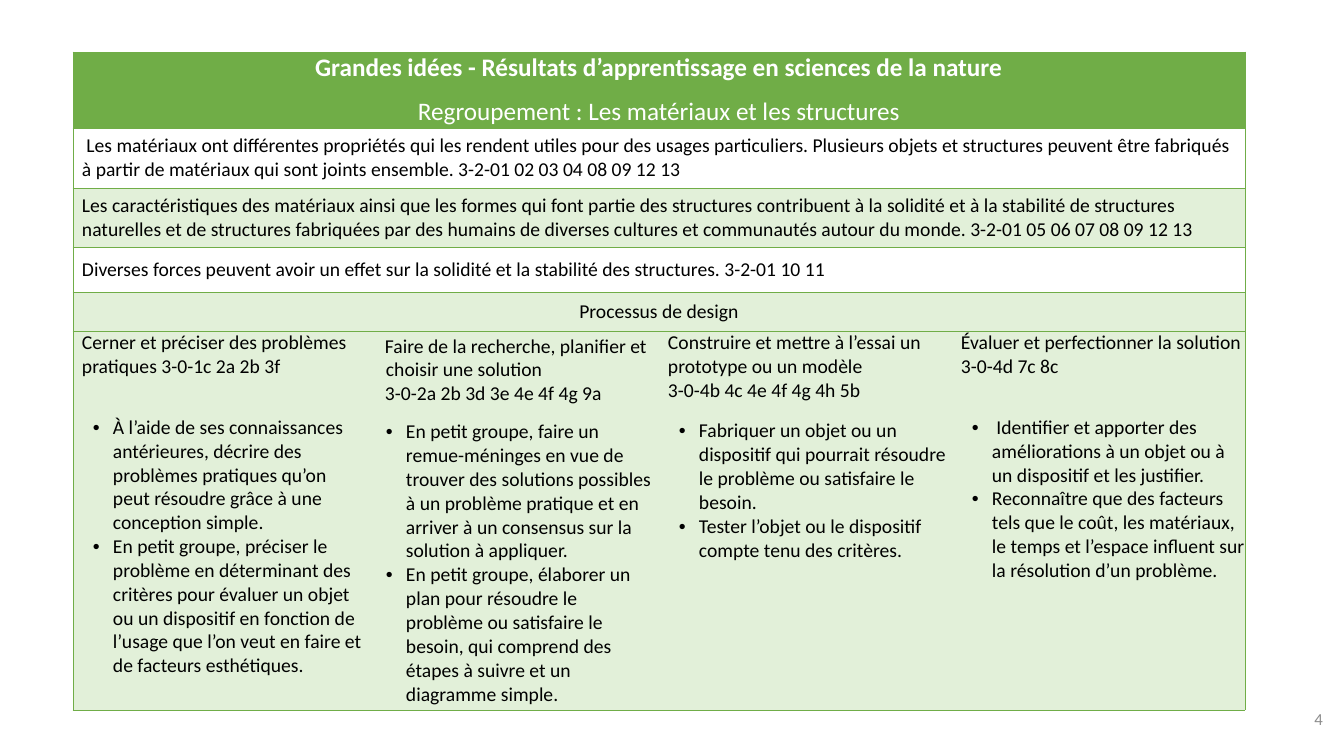
"""Build a one-slide table of Grade 3 science outcomes on materials and structures."""
from lxml import etree
from pptx import Presentation
from pptx import util as u
from pptx.dml.color import RGBColor
from pptx.enum import text
from pptx.oxml import ns

COLORS = {"green": "70AD47", "pale": "E2F0D9", "white": "FFFFFF",
          "black": "000000", "grey": "8C8C8C"}
CENTER, RIGHT = text.PP_ALIGN.CENTER, text.PP_ALIGN.RIGHT
TOP, MIDDLE = text.MSO_ANCHOR.TOP, text.MSO_ANCHOR.MIDDLE
SIDES = "LRTB"


def px(length):
    return u.Emu(round(length * 914400 / 100.8))


def color(name):
    return RGBColor.from_string(COLORS[name])


def write(para, words, size=14, ink="black", bold=False, align=None,
          left=0, hang=0, before=0, bullet=False):
    props = para._p.get_or_add_pPr()
    props.set("marL", str(px(left)))
    props.set("indent", str(px(-hang)))
    if bullet:
        etree.SubElement(props, ns.qn("a:buFont"), typeface="Arial")
        etree.SubElement(props, ns.qn("a:buChar"), char="•")
    if align is not None:
        para.alignment = align
    if before:
        para.space_before = u.Pt(before)
    span = para.add_run()
    span.text = words
    span.font.name = "Calibri"
    span.font.size = u.Pt(size)
    span.font.bold = bold
    span.font.color.rgb = color(ink)


class Deck:
    def __init__(self, width, height):
        self.deck = Presentation()
        self.deck.slide_width, self.deck.slide_height = px(width), px(height)
        self.page = self.deck.slides.add_slide(self.deck.slide_layouts[6])

    def fill_frame(self, frame, inset, paras):
        frame.word_wrap = True
        frame.margin_left = frame.margin_right = px(inset)
        frame.margin_top = frame.margin_bottom = px(inset)
        for index, (words, style) in enumerate(paras):
            para = frame.add_paragraph() if index else frame.paragraphs[0]
            write(para, words, **style)

    def text_box(self, left, top, width, height, inset, paras):
        box = self.page.shapes.add_textbox(px(left), px(top), px(width), px(height))
        self.fill_frame(box.text_frame, inset, paras)

    def table(self, left, top, column, count, heights):
        frame = self.page.shapes.add_table(
            len(heights), count, px(left), px(top), px(column * count), px(sum(heights)))
        table = frame.table
        table.first_row = table.horz_banding = False
        for table_column in table.columns:
            table_column.width = px(column)
        for row, height in zip(table.rows, heights):
            row.height = px(height)
        return table

    def cell(self, cell, fill, sides, anchor=MIDDLE, paras=()):
        cell.fill.solid()
        cell.fill.fore_color.rgb = color(fill)
        cell.vertical_anchor = anchor
        cell.margin_left = cell.margin_right = cell.margin_top = cell.margin_bottom = 0
        self.fill_frame(cell.text_frame, 0, paras)
        props = cell._tc.get_or_add_tcPr()
        for index, side in enumerate(SIDES):
            line = etree.Element(ns.qn(f"a:ln{side}"), w=str(u.Pt(0.5)))
            if side in sides:
                paint = etree.SubElement(line, ns.qn("a:solidFill"))
                etree.SubElement(paint, ns.qn("a:srgbClr"), val=COLORS["green"])
            else:
                etree.SubElement(line, ns.qn("a:noFill"))
            props.insert(index, line)

    def wide_row(self, table, row, fill, paras):
        last = len(table.columns) - 1
        table.cell(row, 0).merge(table.cell(row, last))
        for column in range(last + 1):
            self.cell(table.cell(row, column), fill, SIDES, paras=() if column else paras)


BODY = {"left": 9}
BULLET = {"left": 40, "hang": 20, "bullet": True}
TITLE = {"size": 18, "ink": "white", "align": CENTER}

WIDE_ROWS = [
    ("green", [
        ("Grandes idées - Résultats d’apprentissage en sciences de la nature",
         TITLE | {"bold": True}),
        ("Regroupement : Les matériaux et les structures", TITLE | {"before": 10})]),
    ("white", [
        (" Les matériaux ont différentes propriétés qui les rendent utiles pour des usages "
         "particuliers. Plusieurs objets et structures peuvent être fabriqués à partir de "
         "matériaux qui sont joints ensemble. 3-2-01 02 03 04 08 09 12 13", BODY)]),
    ("pale", [
        ("Les caractéristiques des matériaux ainsi que les formes qui font partie des "
         "structures contribuent à la solidité et à la stabilité de structures naturelles et "
         "de structures fabriquées par des humains de diverses cultures et communautés autour "
         "du monde. 3-2-01 05 06 07 08 09 12 13", BODY)]),
    ("white", [
        ("Diverses forces peuvent avoir un effet sur la solidité et la stabilité des "
         "structures. 3-2-01 10 11", BODY)]),
    ("pale", [("Processus de design", {"align": CENTER})]),
]

STEPS = [
    (TOP, BODY, 26.5,
     ["Cerner et préciser des problèmes pratiques 3-0-1c 2a 2b 3f"],
     ["À l’aide de ses connaissances antérieures, décrire des problèmes pratiques qu’on peut "
      "résoudre grâce à une conception simple.",
      "En petit groupe, préciser le problème en déterminant des critères pour évaluer un objet "
      "ou un dispositif en fonction de l’usage que l’on veut en faire et de facteurs "
      "esthétiques."]),
    (MIDDLE, {"left": 20, "hang": 1}, 10,
     ["Faire de la recherche, planifier et choisir une solution",
      "3-0-2a 2b 3d 3e 4e 4f 4g 9a"],
     ["En petit groupe, faire un remue-méninges en vue de trouver des solutions possibles à un "
      "problème pratique et en arriver à un consensus sur la solution à appliquer.",
      "En petit groupe, élaborer un plan pour résoudre le problème ou satisfaire le besoin, "
      "qui comprend des étapes à suivre et un diagramme simple."]),
    (TOP, BODY, 12,
     ["Construire et mettre à l’essai un prototype ou un modèle",
      "3-0-4b 4c 4e 4f 4g 4h 5b"],
     ["Fabriquer un objet ou un dispositif qui pourrait résoudre le problème ou satisfaire le "
      "besoin.",
      "Tester l’objet ou le dispositif compte tenu des critères."]),
    (TOP, BODY, 26.5,
     ["Évaluer et perfectionner la solution", "3-0-4d 7c 8c"],
     [" Identifier et apporter des améliorations à un objet ou à un dispositif et les "
      "justifier.",
      "Reconnaître que des facteurs tels que le coût, les matériaux, le temps et l’espace "
      "influent sur la résolution d’un problème."]),
]


def main():
    deck = Deck(1344, 756)
    deck.text_box(1256, 699, 80, 57, 13,
                  [("4", {"size": 12, "ink": "grey", "align": RIGHT})])
    table = deck.table(73, 52, 293, len(STEPS), [76, 60, 59, 45, 39, 379])
    for row, (fill, paras) in enumerate(WIDE_ROWS):
        deck.wide_row(table, row, fill, paras)
    outer = {0: "L", len(STEPS) - 1: "R"}
    for column, (anchor, style, gap, heading, tasks) in enumerate(STEPS):
        paras = [(words, style) for words in heading]
        paras += [(words, BULLET | {"before": 0 if index else gap})
                  for index, words in enumerate(tasks)]
        deck.cell(table.cell(len(WIDE_ROWS), column), "pale",
                  "TB" + outer.get(column, ""), anchor, paras)
    deck.deck.save("out.pptx")


if __name__ == "__main__":
    main()
